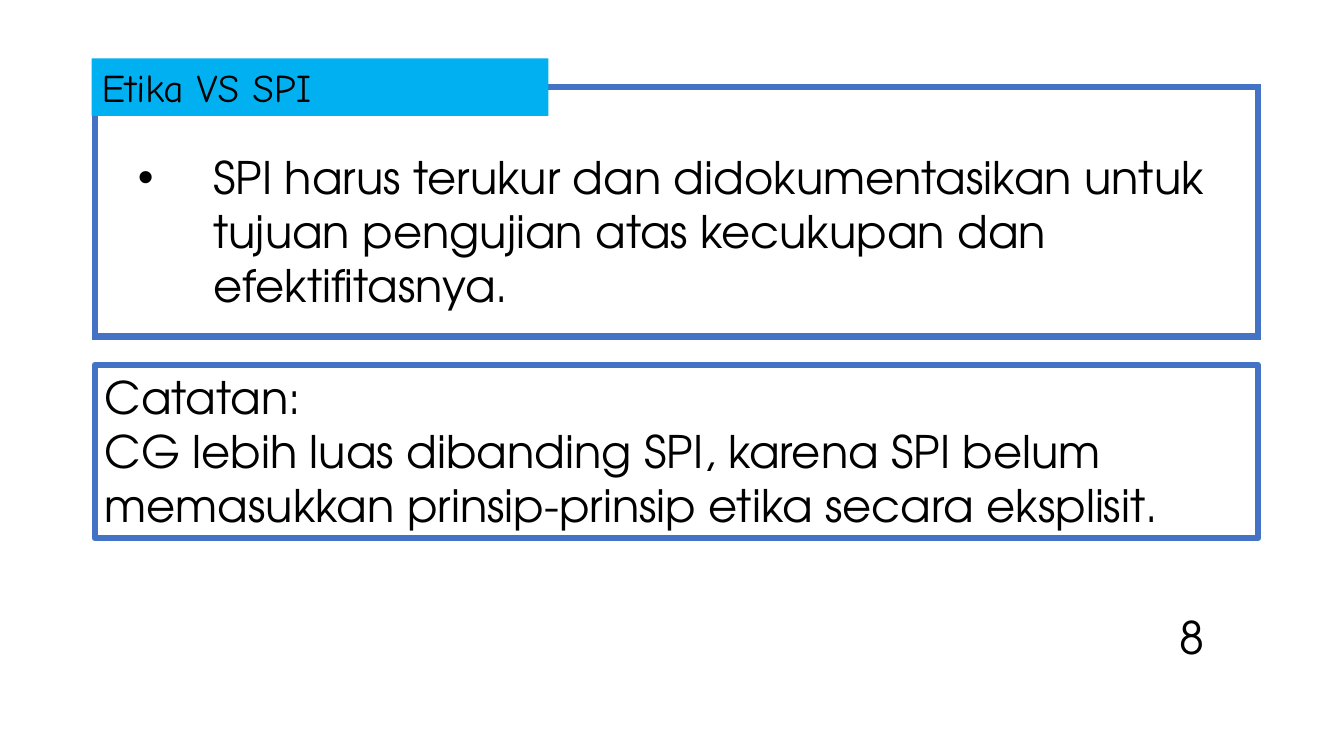
from dataclasses import dataclass

from lxml import etree
from pptx import Presentation
from pptx.dml.color import RGBColor
from pptx.enum.shapes import MSO_SHAPE
from pptx.enum.text import MSO_ANCHOR, PP_ALIGN
from pptx.oxml.ns import qn
from pptx.util import Pt

RECTANGLE = MSO_SHAPE.RECTANGLE
TOP = MSO_ANCHOR.TOP
LEFT = PP_ALIGN.LEFT


@dataclass(frozen=True)
class Theme:
    text: RGBColor = RGBColor(0x00, 0x00, 0x00)
    border: RGBColor = RGBColor(0x44, 0x72, 0xC4)
    label_fill: RGBColor = RGBColor(0x00, 0xB0, 0xF0)
    body_font: str = "TeX Gyre Adventor"
    label_font: str = "Comic Neue"
    body_size: float = 32
    label_size: float = 28
    border_width: float = 4.5


@dataclass(frozen=True)
class Box:
    left: float
    top: float
    width: float
    height: float

    def lengths(self):
        return [Pt(value) for value in (self.left, self.top, self.width, self.height)]


THEME = Theme()


def write_text(shape, lines, font=THEME.body_font, size=THEME.body_size):
    frame = shape.text_frame
    frame.word_wrap = True
    frame.vertical_anchor = TOP
    frame.text = "\n".join(lines)
    for paragraph in frame.paragraphs:
        paragraph.alignment = LEFT
        paragraph.font.name = font
        paragraph.font.size = Pt(size)
        paragraph.font.color.rgb = THEME.text


def add_text(slide, box, line):
    shape = slide.shapes.add_textbox(*box.lengths())
    write_text(shape, [line])
    return shape


def add_bullet(paragraph, indent):
    properties = paragraph._p.get_or_add_pPr()
    properties.set("marL", str(Pt(indent)))
    properties.set("indent", str(-Pt(indent)))
    first_run_style = properties.find(qn("a:defRPr"))
    font = etree.Element(qn("a:buFont"), typeface="Arial")
    character = etree.Element(qn("a:buChar"), char="•")
    first_run_style.addprevious(font)
    first_run_style.addprevious(character)


def add_frame(slide, box):
    """Add an unfilled rectangle with a thick border."""
    shape = slide.shapes.add_shape(RECTANGLE, *box.lengths())
    shape.shadow.inherit = False
    shape.fill.background()
    shape.line.color.rgb = THEME.border
    shape.line.width = Pt(THEME.border_width)
    return shape


def add_label(slide, box, line):
    shape = slide.shapes.add_shape(RECTANGLE, *box.lengths())
    shape.shadow.inherit = False
    shape.fill.solid()
    shape.fill.fore_color.rgb = THEME.label_fill
    shape.line.fill.background()
    write_text(shape, [line], THEME.label_font, THEME.label_size)


def add_topic(slide, box, title, statement):
    """Add a bulleted statement in a frame whose top edge carries a label."""
    text_box = Box(box.left + 23.75, box.top + 41.75, box.width - 29.5, 123.85)
    text = add_text(slide, text_box, statement)
    add_bullet(text.text_frame.paragraphs[0], indent=54)
    frame = add_frame(slide, box)
    etree.SubElement(frame.line._get_or_add_ln(), qn("a:miter"), lim="800000")
    add_label(slide, Box(box.left - 2.15, box.top - 20.15, 326.15, 41.05), title)


def add_note(slide, box, lines):
    write_text(add_frame(slide, box), lines)


def main():
    presentation = Presentation()
    presentation.slide_width = Pt(960)
    presentation.slide_height = Pt(540)
    slide = presentation.slides.add_slide(presentation.slide_layouts[6])

    left, width = 67.7, 830.9
    number_width = 63.35
    add_topic(
        slide,
        Box(left, 61.9, width, 178.55),
        "Etika VS SPI",
        "SPI harus terukur dan didokumentasikan untuk tujuan pengujian atas "
        "kecukupan dan efektifitasnya.",
    )
    add_note(
        slide,
        Box(left, 260.65, width, 123.85),
        [
            "Catatan:",
            "CG lebih luas dibanding SPI, karena SPI belum memasukkan "
            "prinsip-prinsip etika secara eksplisit.",
        ],
    )
    add_text(slide, Box(left + width - number_width, 432, number_width, 46), "8")
    presentation.save("out.pptx")


if __name__ == "__main__":
    main()
